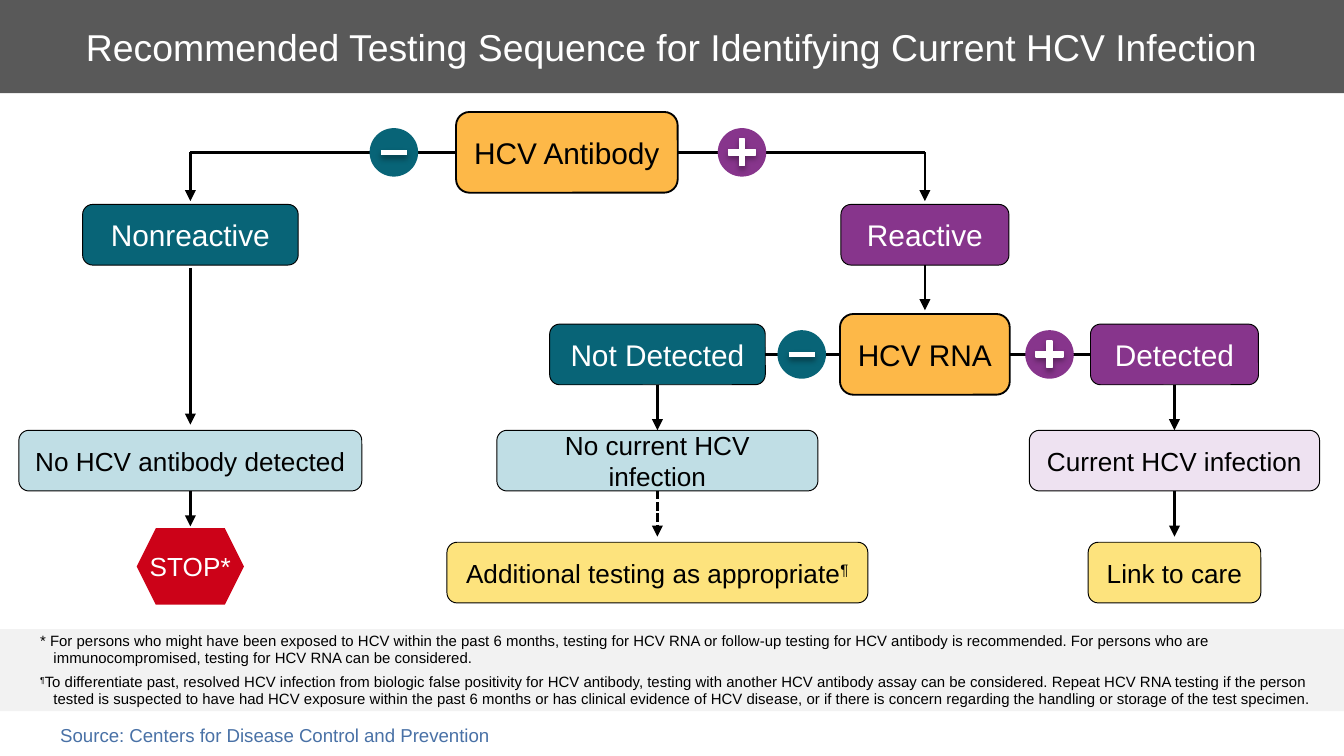
from lxml.etree import SubElement
from pptx import Presentation
from pptx.dml.color import RGBColor
from pptx.enum.dml import MSO_LINE
from pptx.enum.shapes import MSO_CONNECTOR, MSO_SHAPE
from pptx.enum.text import MSO_ANCHOR, PP_ALIGN
from pptx.oxml.ns import qn
from pptx.util import Pt

BLACK, WHITE = "000000", "FFFFFF"
TEAL, PURPLE, ORANGE = "086477", "87358C", "FDB848"
PALE_TEAL, PALE_PURPLE, YELLOW = "C0DEE5", "EEE2F1", "FDE37D"
TOP, LEFT, BOTTOM, RIGHT = range(4)
NODE_HEIGHT, TEST_HEIGHT, BADGE_SIZE = 32.5, 43.25, 26


def rgb(value):
    return RGBColor.from_string(value)


def write(shape, *paragraphs, size, color=BLACK, align=PP_ALIGN.CENTER,
          anchor=MSO_ANCHOR.MIDDLE, wrap=True, margins=(7.2, 3.6),
          hanging=None, leading=None, gap=0):
    frame = shape.text_frame
    frame.word_wrap = wrap
    frame.vertical_anchor = anchor
    frame.margin_left = frame.margin_right = Pt(margins[0])
    frame.margin_top = frame.margin_bottom = Pt(margins[1])
    for index, text in enumerate(paragraphs):
        paragraph = frame.add_paragraph() if index else frame.paragraphs[0]
        paragraph.alignment = align
        if hanging:
            properties = paragraph._p.get_or_add_pPr()
            properties.set("marL", str(Pt(hanging[0])))
            properties.set("indent", str(Pt(hanging[1])))
        if leading:
            paragraph.line_spacing = Pt(leading)
        if index:
            paragraph.space_before = Pt(gap)
        for part in text.partition("¶"):
            if not part:
                continue
            run = paragraph.add_run()
            run.text = part
            run.font.name = "Arial"
            run.font.size = Pt(size)
            run.font.color.rgb = rgb(color)
            if part == "¶":
                run._r.get_or_add_rPr().set("baseline", "30000")


def add_block(slide, kind, box, fill, line=None, line_width=0.5):
    block = slide.shapes.add_shape(kind, *map(Pt, box))
    block.shadow.inherit = False
    block.fill.solid()
    block.fill.fore_color.rgb = rgb(fill)
    if line:
        block.line.color.rgb = rgb(line)
        block.line.width = Pt(line_width)
    else:
        block.line.fill.background()
    return block


def add_line(slide, start, end, color=BLACK, width=1.5, arrow=False,
             dashed=False, source=None, target=None):
    line = slide.shapes.add_connector(MSO_CONNECTOR.STRAIGHT, *map(Pt, (*start, *end)))
    line.line.color.rgb = rgb(color)
    line.line.width = Pt(width)
    if dashed:
        line.line.dash_style = MSO_LINE.SQUARE_DOT
    properties = line._element.spPr
    if arrow:
        SubElement(properties.find(qn("a:ln")), qn("a:tailEnd"), type="triangle")
    SubElement(properties, qn("a:effectLst"))
    if source:
        line.begin_connect(*source)
    if target:
        line.end_connect(*target)
    return line


def cast_shadow(symbol, opacity):
    effects = symbol._element.spPr.find(qn("a:effectLst"))
    shadow = SubElement(effects, qn("a:outerShdw"), blurRad=str(Pt(3.1)),
                        dist=str(Pt(1.8)), dir="5400000", rotWithShape="0")
    tint = SubElement(shadow, qn("a:srgbClr"), val=BLACK)
    SubElement(tint, qn("a:alpha"), val=str(opacity * 1000))


def add_node(slide, text, center, top, width, fill, color=BLACK, size=14,
             height=NODE_HEIGHT, line_width=0.5, wrap=False):
    box = (center - width / 2, top, width, height)
    node = add_block(slide, MSO_SHAPE.ROUNDED_RECTANGLE, box, fill, BLACK, line_width)
    write(node, text, size=size, color=color, wrap=wrap, margins=(9, 3.6))
    return node


def add_result(slide, text, center, top, width, fill):
    return add_node(slide, text, center, top, width, fill, WHITE, 16)


def add_test(slide, text, center, top, width):
    return add_node(slide, text, center, top, width, ORANGE, size=16,
                    height=TEST_HEIGHT, line_width=1)


def add_badge(slide, center, middle, positive):
    half = BADGE_SIZE / 2
    box = (center - half, middle - half, BADGE_SIZE, BADGE_SIZE)
    add_block(slide, MSO_SHAPE.OVAL, box, PURPLE if positive else TEAL)
    if positive:
        sign_box = (center - 9.75, middle - 9.75, 19.5, 19.5)
        sign = add_block(slide, MSO_SHAPE.MATH_PLUS, sign_box, WHITE, WHITE, 0.75)
        sign.adjustments[0] = 0.142
        cast_shadow(sign, 35)
    else:
        sign = add_line(slide, (center - 7, middle), (center + 7, middle), WHITE, 3)
        cast_shadow(sign, 38)


def add_title(slide, box):
    band = add_block(slide, MSO_SHAPE.RECTANGLE, box, "595959")
    write(band, "Recommended Testing Sequence for Identifying Current HCV Infection",
          size=20, color=WHITE)


def add_flowchart(slide, box):
    x, y, width, height = box
    nonreactive_x, not_detected_x = x + 102, x + 352.2
    reactive_x, detected_x = x + 495.5, x + 629.2
    result_y, rna_y, outcome_y, action_y = y + 59.5, y + 118.25, y + 180.5, y + 240.5
    status_y = rna_y + (TEST_HEIGHT - NODE_HEIGHT) / 2
    antibody_y = y + 10
    antibody_middle, rna_middle = (top + TEST_HEIGHT / 2 for top in (antibody_y, rna_y))

    antibody = add_test(slide, "HCV Antibody", x + 303.7, antibody_y, 118.75)
    add_result(slide, "Nonreactive", nonreactive_x, result_y, 115.5, TEAL)
    reactive = add_result(slide, "Reactive", reactive_x, result_y, 90, PURPLE)
    rna = add_test(slide, "HCV RNA", reactive_x, rna_y, 91)
    not_detected = add_result(slide, "Not Detected", not_detected_x, status_y, 115.5, TEAL)
    detected = add_result(slide, "Detected", detected_x, status_y, 90, PURPLE)
    no_antibody = add_node(slide, "No HCV antibody detected", nonreactive_x,
                           outcome_y, 183.75, PALE_TEAL)
    no_infection = add_node(slide, "No current HCV infection", not_detected_x,
                            outcome_y, 172, PALE_TEAL, wrap=True)
    infection = add_node(slide, "Current HCV infection", detected_x,
                         outcome_y, 155.5, PALE_PURPLE)
    add_node(slide, "Additional testing as appropriate¶", not_detected_x,
             action_y, 225.5, YELLOW)
    add_node(slide, "Link to care", detected_x, action_y, 92.5, YELLOW)
    stop = add_block(slide, MSO_SHAPE.HEXAGON,
                     (nonreactive_x - 28.75, y + 233, 57.5, 41), "CC0218")
    write(stop, "STOP*", size=14, color=WHITE, wrap=False, margins=(0, 0))

    for center, side in ((nonreactive_x, LEFT), (reactive_x, RIGHT)):
        corner = (center, antibody_middle)
        add_line(slide, corner, corner, source=(antibody, side))
        add_line(slide, corner, (center, result_y - 1.75), arrow=True)
    for status, side, facing in ((not_detected, LEFT, RIGHT), (detected, RIGHT, LEFT)):
        middle = (reactive_x, rna_middle)
        add_line(slide, middle, middle, source=(rna, side), target=(status, facing))

    add_line(slide, (nonreactive_x, result_y + 34), (nonreactive_x, outcome_y - 3),
             arrow=True)
    for center, status, outcome in ((not_detected_x, not_detected, no_infection),
                                    (detected_x, detected, infection)):
        add_line(slide, (center, status_y), (center, outcome_y), arrow=True,
                 source=(status, BOTTOM), target=(outcome, TOP))
    for center, origin, end, dashed in (
            (reactive_x, reactive, rna_y - 2, False),
            (nonreactive_x, no_antibody, y + 232, False),
            (not_detected_x, no_infection, action_y - 3, True),
            (detected_x, infection, action_y - 3, False)):
        add_line(slide, (center, end), (center, end), arrow=True, dashed=dashed,
                 source=(origin, BOTTOM))

    for center, middle, positive in (
            (x + 211, antibody_middle, False), (x + 397.5, antibody_middle, True),
            (x + 429.5, rna_middle, False), (x + 562.25, rna_middle, True)):
        add_badge(slide, center, middle, positive)


def add_footnotes(slide, box):
    band = add_block(slide, MSO_SHAPE.RECTANGLE, box, "F2F2F2")
    write(band,
          "* For persons who might have been exposed to HCV within the past 6 months, "
          "testing for HCV RNA or follow-up testing for HCV antibody is recommended. "
          "For persons who are immunocompromised, testing for HCV RNA can be considered.",
          "¶To differentiate past, resolved HCV infection from biologic false positivity "
          "for HCV antibody, testing with another HCV antibody assay can be considered. "
          "Repeat HCV RNA testing if the person tested is suspected to have had HCV "
          "exposure within the past 6 months or has clinical evidence of HCV disease, "
          "or if there is concern regarding the handling or storage of the test specimen.",
          size=8, align=PP_ALIGN.LEFT, margins=(7.2, 7.2), hanging=(21.6, -7.2),
          leading=9, gap=4)


def add_source(slide, box):
    source = slide.shapes.add_textbox(*map(Pt, box))
    write(source, "Source: Centers for Disease Control and Prevention", size=10,
          color="4971A6", align=PP_ALIGN.LEFT, anchor=MSO_ANCHOR.TOP)


def main():
    deck = Presentation()
    deck.slide_width, deck.slide_height = Pt(720), Pt(405)
    slide = deck.slides.add_slide(deck.slide_layouts[6])
    add_flowchart(slide, (0, 50, 720, 287))
    add_title(slide, (0, 0, 720, 50))
    add_footnotes(slide, (0, 337, 720, 44))
    add_source(slide, (25.2, 384, 609, 17.5))
    deck.save("out.pptx")


if __name__ == "__main__":
    main()
